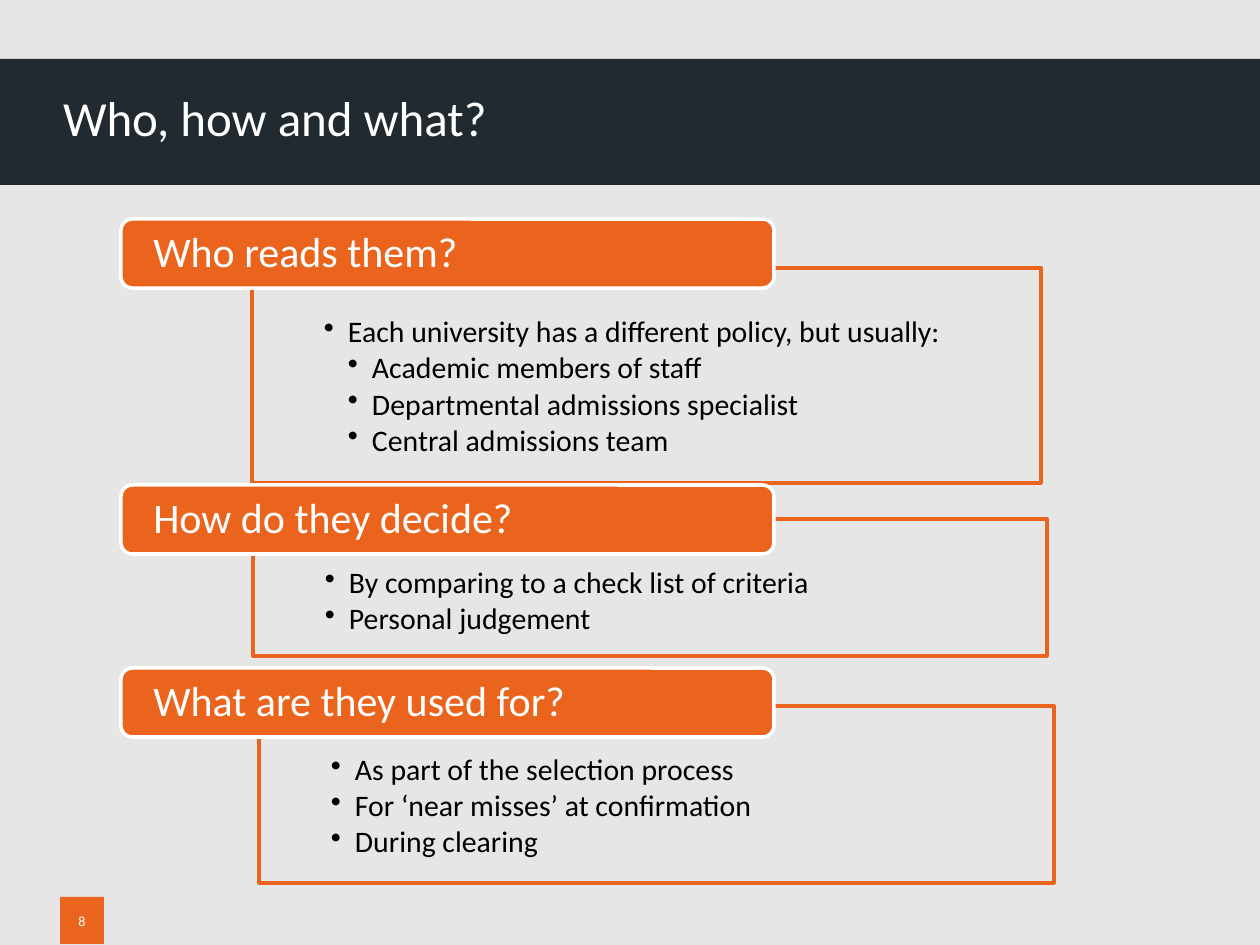
from lxml import etree
from pptx import Presentation
from pptx.dml.color import RGBColor
from pptx.enum.shapes import MSO_SHAPE
from pptx.enum.text import MSO_ANCHOR, PP_ALIGN
from pptx.oxml.ns import qn
from pptx.util import Emu, Pt

RECT, ROUNDED = MSO_SHAPE.RECTANGLE, MSO_SHAPE.ROUNDED_RECTANGLE
TOP, MIDDLE = MSO_ANCHOR.TOP, MSO_ANCHOR.MIDDLE
LEFT, CENTER = PP_ALIGN.LEFT, PP_ALIGN.CENTER

EMU_PER_PX = 914400 / 126
ORANGE, WHITE, NAVY, GREY = "EB641E", "FFFFFF", "202A30", "E7E6E6"
BULLET_INDENT = 24
HEADING_BOX = (121, 219, 653, 69)

# heading, heading top, list box, (level, point) pairs
SECTIONS = [
    ("Who reads them?", 219, (252, 268, 789, 215), [
        (1, "Each university has a different policy, but usually:"),
        (2, "Academic members of staff"),
        (2, "Departmental admissions specialist"),
        (2, "Central admissions team"),
    ]),
    ("How do they decide?", 485, (253, 519, 794, 137), [
        (1, "By comparing to a check list of criteria"),
        (1, "Personal judgement"),
    ]),
    ("What are they used for?", 668, (259, 706, 795, 177), [
        (1, "As part of the selection process"),
        (1, "For ‘near misses’ at confirmation"),
        (1, "During clearing"),
    ]),
]


def px(length):
    return Emu(round(length * EMU_PER_PX))


def color(hex_value):
    return RGBColor.from_string(hex_value)


def add_box(slide, preset, box, fill, line=None):
    shape = slide.shapes.add_shape(preset, *map(px, box))
    shape.shadow.inherit = False
    shape.fill.solid()
    shape.fill.fore_color.rgb = color(fill)
    if line:
        shape.line.color.rgb = color(line)
        shape.line.width = Pt(2)
    else:
        shape.line.fill.background()
    return shape


def set_opacity(shape, percent):
    fill_color = shape.fill._xPr.find(qn("a:solidFill"))[0]
    etree.SubElement(fill_color, qn("a:alpha"), val=str(percent * 1000))


def format_frame(frame, anchor, insets=(0, 0, 0, 0)):
    left, top, right, bottom = map(px, insets)
    settings = {
        "word_wrap": True, "vertical_anchor": anchor,
        "margin_left": left, "margin_top": top,
        "margin_right": right, "margin_bottom": bottom,
    }
    for name, value in settings.items():
        setattr(frame, name, value)


def write(paragraph, text, size, text_color, **paragraph_format):
    for name, value in {"alignment": LEFT, **paragraph_format}.items():
        setattr(paragraph, name, value)
    run = paragraph.add_run()
    run.text = text
    run.font.name = "Calibri"
    run.font.size = Pt(size)
    run.font.color.rgb = color(text_color)


def add_bullet(paragraph, level):
    properties = paragraph._p.get_or_add_pPr()
    properties.set("marL", str(px(BULLET_INDENT * level)))
    properties.set("indent", str(-px(BULLET_INDENT)))
    etree.SubElement(properties, qn("a:buChar"), char="•")


def add_title_band(slide, box):
    left, top, width, height = box
    add_box(slide, RECT, box, NAVY)
    title = slide.shapes.title
    title.left, title.top = px(left + 63), px(top - 6)
    title.width, title.height = px(902), px(height + 1)
    format_frame(title.text_frame, MIDDLE)
    write(title.text_frame.paragraphs[0], "Who, how and what?", 28, WHITE)
    slide.shapes._spTree.append(title._element)  # in front of the band


def add_point_list(slide, box, points):
    panel = add_box(slide, RECT, box, GREY, ORANGE)
    set_opacity(panel, 90)
    frame = panel.text_frame
    format_frame(frame, TOP, (72, 49, 72, 16))
    for index, (level, point) in enumerate(points):
        paragraph = frame.add_paragraph() if index else frame.paragraphs[0]
        add_bullet(paragraph, level)
        write(paragraph, point, 17, "000000", level=level,
              line_spacing=0.9, space_after=Pt(2.3))


def add_heading(slide, box, heading):
    tab = add_box(slide, ROUNDED, box, ORANGE, WHITE)
    format_frame(tab.text_frame, MIDDLE, (29, 0, 29, 0))
    write(tab.text_frame.paragraphs[0], heading, 24, WHITE, line_spacing=0.9)


def add_page_number(slide, box, number):
    badge = add_box(slide, RECT, box, ORANGE)
    format_frame(badge.text_frame, MIDDLE)
    write(badge.text_frame.paragraphs[0], number, 8, WHITE, alignment=CENTER)


def main():
    prs = Presentation()
    prs.slide_width, prs.slide_height = px(1260), px(945)
    slide = prs.slides.add_slide(prs.slide_layouts[5])
    slide.background.fill.solid()
    slide.background.fill.fore_color.rgb = color("E6E6E6")

    add_title_band(slide, (0, 59, 1260, 126))
    left, _, width, height = HEADING_BOX
    for heading, top, list_box, points in SECTIONS:
        add_point_list(slide, list_box, points)
        add_heading(slide, (left, top, width, height), heading)
    add_page_number(slide, (60, 897, 44, 47), "8")
    prs.save("out.pptx")


if __name__ == "__main__":
    main()
